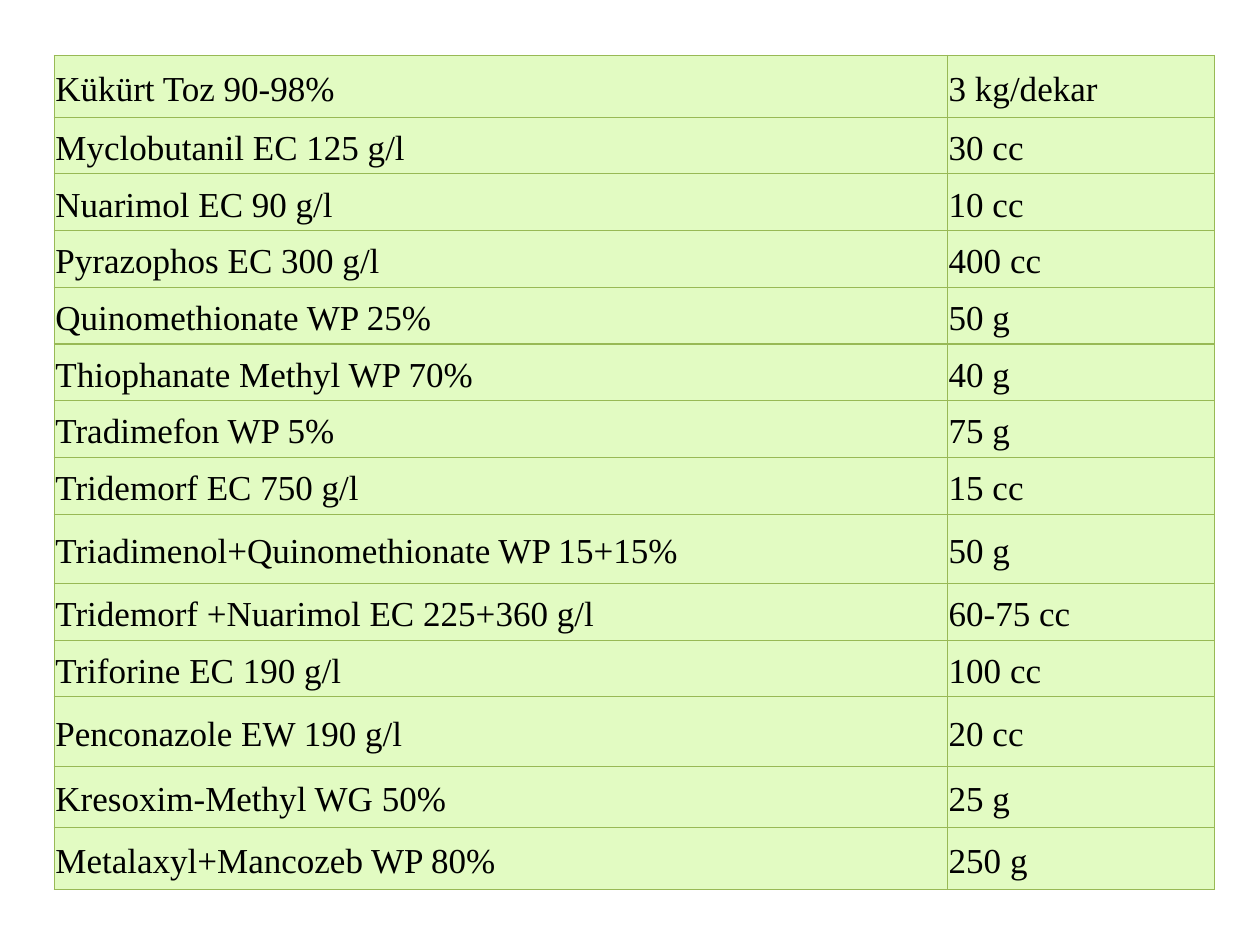
from dataclasses import dataclass

from lxml.etree import SubElement
from pptx import Presentation
from pptx.dml.color import RGBColor
from pptx.enum.text import MSO_ANCHOR
from pptx.oxml.ns import qn
from pptx.table import _Cell
from pptx.util import Inches, Pt

FILL_COLOR = "E2FBC2"
BORDER_COLOR = "98B955"
TEXT_COLOR = "000000"
COLUMN_WIDTHS = (7.09, 2.12)
CELL_MARGIN = Inches(0.01)


@dataclass
class Treatment:
    ingredient: str
    dose: str
    height: float = 0.45


TREATMENTS = [
    Treatment("Kükürt Toz 90-98%", "3 kg/dekar", 0.49),
    Treatment("Myclobutanil EC 125 g/l", "30 cc"),
    Treatment("Nuarimol EC 90 g/l", "10 cc"),
    Treatment("Pyrazophos EC 300 g/l", "400 cc"),
    Treatment("Quinomethionate WP 25%", "50 g"),
    Treatment("Thiophanate Methyl WP 70%", "40 g"),
    Treatment("Tradimefon WP 5%", "75 g"),
    Treatment("Tridemorf EC 750 g/l", "15 cc"),
    Treatment("Triadimenol+Quinomethionate WP 15+15%", "50 g", 0.55),
    Treatment("Tridemorf +Nuarimol EC 225+360 g/l", "60-75 cc"),
    Treatment("Triforine EC 190 g/l", "100 cc"),
    Treatment("Penconazole EW 190 g/l", "20 cc", 0.55),
    Treatment("Kresoxim-Methyl WG 50%", "25 g", 0.49),
    Treatment("Metalaxyl+Mancozeb WP 80%", "250 g", 0.49),
]


def rgb(color: str) -> RGBColor:
    return RGBColor.from_string(color)


def add_borders(cell: _Cell) -> None:
    """Outline all four sides; the schema wants the lines before the fill."""
    properties = cell._tc.get_or_add_tcPr()
    for index, side in enumerate(("lnL", "lnR", "lnT", "lnB")):
        line = SubElement(properties, qn(f"a:{side}"), w=str(Pt(0.75)))
        solid_fill = SubElement(line, qn("a:solidFill"))
        SubElement(solid_fill, qn("a:srgbClr"), val=BORDER_COLOR)
        properties.insert(index, line)


def write_cell(cell: _Cell, text: str) -> None:
    cell.margin_left = cell.margin_right = CELL_MARGIN
    cell.margin_top = cell.margin_bottom = CELL_MARGIN
    cell.vertical_anchor = MSO_ANCHOR.MIDDLE
    cell.fill.solid()
    cell.fill.fore_color.rgb = rgb(FILL_COLOR)
    add_borders(cell)

    cell.text_frame.text = text
    paragraph = cell.text_frame.paragraphs[0]
    paragraph.line_spacing = 1.15
    paragraph.space_after = Pt(10)
    font = paragraph.runs[0].font
    font.name = "Times New Roman"
    font.size = Pt(20)
    font.bold = False
    font.color.rgb = rgb(TEXT_COLOR)


def main() -> None:
    presentation = Presentation()
    presentation.slide_width = Inches(10)
    presentation.slide_height = Inches(7.5)
    slide = presentation.slides.add_slide(presentation.slide_layouts[6])

    total_height = sum(treatment.height for treatment in TREATMENTS)
    table = slide.shapes.add_table(
        len(TREATMENTS), len(COLUMN_WIDTHS), Inches(0.43), Inches(0.44),
        Inches(sum(COLUMN_WIDTHS)), Inches(total_height),
    ).table
    table.first_row = False
    table.horz_banding = False
    for column, width in zip(table.columns, COLUMN_WIDTHS):
        column.width = Inches(width)
    for row, treatment in zip(table.rows, TREATMENTS):
        row.height = Inches(treatment.height)
        for cell, text in zip(row.cells, (treatment.ingredient, treatment.dose)):
            write_cell(cell, text)

    presentation.save("out.pptx")


if __name__ == "__main__":
    main()
